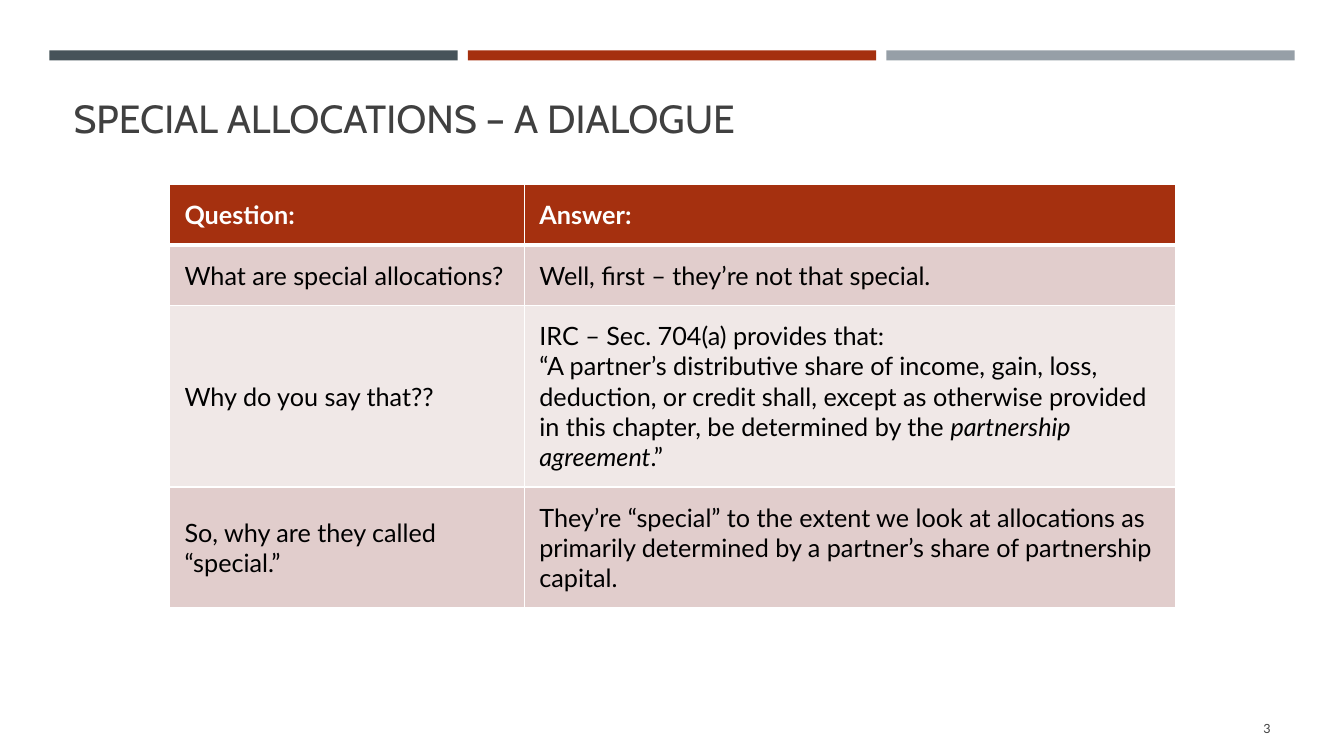
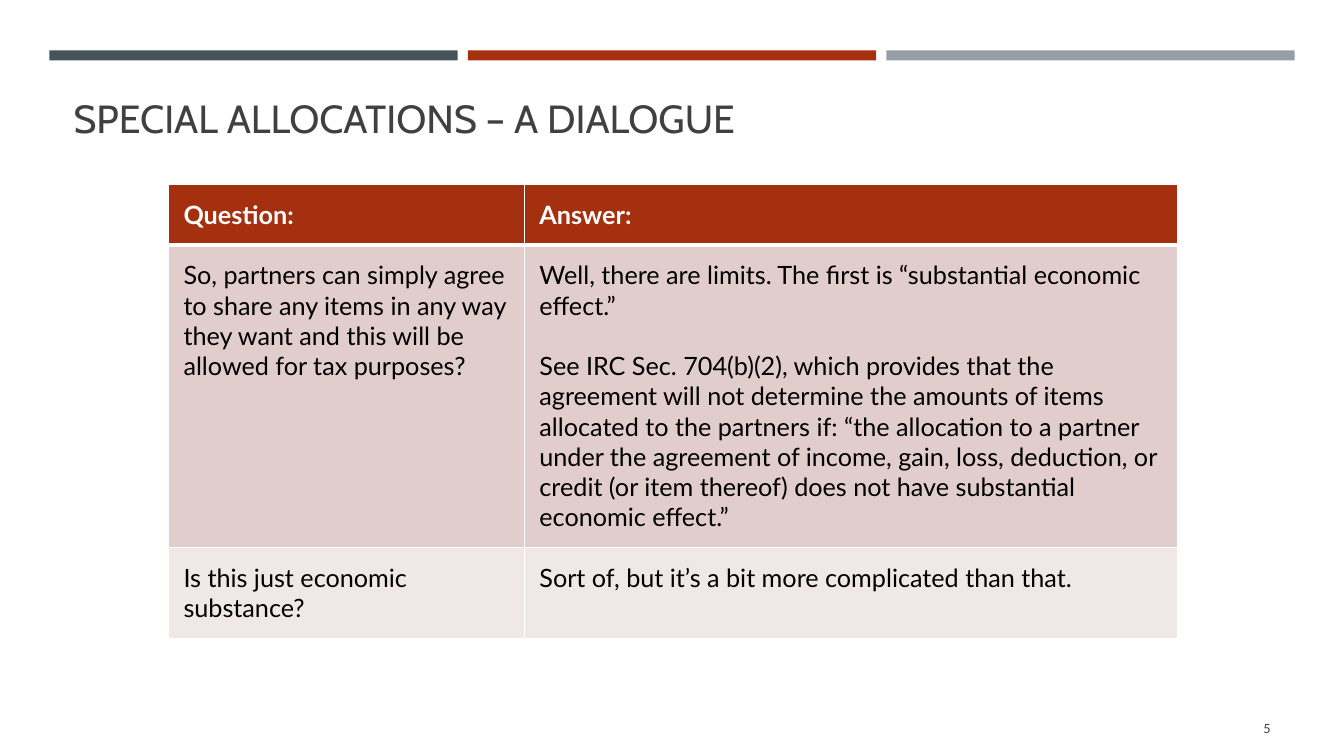
from lxml.etree import SubElement
from pptx import Presentation
from pptx.dml.color import RGBColor
from pptx.enum.shapes import MSO_SHAPE
from pptx.enum.text import MSO_ANCHOR, MSO_AUTO_SIZE, PP_ALIGN
from pptx.oxml.ns import qn
from pptx.util import Inches, Pt

SLATE, RUST, GREY = "465359", "A5300F", "969FA7"
INK, BLACK, WHITE = "404040", "000000", "FFFFFF"
ROW_FILLS = ("E1CDCC", "F0E8E7")
TITLE_FONT, BODY_FONT = "Cabin", "Lato"
TITLE = "SPECIAL ALLOCATIONS – A DIALOGUE"
HEADER = ("Question:", "Answer:")
LINE_HEIGHT = 0.3
CELL_MARGIN = 0.15


def color(value):
    """Turn a hex string into a colour."""
    return RGBColor.from_string(value)


class Deck:
    """Holds the shared style and the slide being built."""

    def __init__(self):
        """Start an empty widescreen presentation."""
        self.presentation = Presentation()
        self.presentation.slide_width = Inches(13.33)
        self.presentation.slide_height = Inches(7.5)
        self.slide = None

    def add_slide(self, title, number):
        """Add a slide with its bands, title and number."""
        self.slide = self.presentation.slides.add_slide(self.presentation.slide_layouts[5])
        self.add_bands()
        self.add_title(title)
        self.add_number(number)

    def add_bands(self):
        """Draw the three coloured bands along the top."""
        for index, fill in enumerate((SLATE, RUST, GREY)):
            band = self.slide.shapes.add_shape(
                MSO_SHAPE.RECTANGLE, Inches(0.49 + index * 4.15), Inches(0.5),
                Inches(4.05), Inches(0.1))
            band.shadow.inherit = False
            band.fill.solid()
            band.fill.fore_color.rgb = color(fill)
            band.line.fill.background()

    def add_run(self, paragraph, text, size, ink, font=BODY_FONT, bold=False, italic=False):
        """Append one formatted run to a paragraph."""
        run = paragraph.add_run()
        run.text = text
        run.font.name = font
        run.font.size = Pt(size)
        run.font.color.rgb = color(ink)
        run.font.bold = bold
        run.font.italic = italic

    def add_title(self, text):
        """Place and fill the title placeholder."""
        title = self.slide.shapes.title
        title.left, title.top = Inches(0.63), Inches(0.64)
        title.width, title.height = Inches(12.06), Inches(0.81)
        frame = title.text_frame
        frame.auto_size = MSO_AUTO_SIZE.NONE
        frame.vertical_anchor = MSO_ANCHOR.BOTTOM
        paragraph = frame.paragraphs[0]
        paragraph.alignment = PP_ALIGN.LEFT
        self.add_run(paragraph, text, 28, INK, TITLE_FONT)

    def add_number(self, number):
        """Write the slide number at the lower right."""
        box = self.slide.shapes.add_textbox(Inches(11.55), Inches(7.03), Inches(1.15), Inches(0.4))
        frame = box.text_frame
        frame.word_wrap = True
        frame.vertical_anchor = MSO_ANCHOR.MIDDLE
        paragraph = frame.paragraphs[0]
        paragraph.alignment = PP_ALIGN.RIGHT
        self.add_run(paragraph, str(number), 9, INK)

    def add_borders(self, cell, top, bottom):
        """Give a cell white borders of the given top and bottom widths."""
        properties = cell._tc.get_or_add_tcPr()
        for side, width in (("L", 1), ("R", 1), ("T", top), ("B", bottom)):
            line = SubElement(properties, qn(f"a:ln{side}"), w=str(Pt(width)))
            fill = SubElement(line, qn("a:solidFill"))
            SubElement(fill, qn("a:srgbClr"), val=WHITE)

    def fill_cell(self, cell, paragraphs, row, anchor, gap):
        """Style a cell and write its paragraphs, with the gap between them in points."""
        is_header = row == 0
        self.add_borders(cell, 3 if row == 1 else 1, 3 if is_header else 1)
        cell.fill.solid()
        cell.fill.fore_color.rgb = color(RUST if is_header else ROW_FILLS[(row - 1) % 2])
        cell.margin_left = cell.margin_right = Inches(CELL_MARGIN)
        cell.margin_top = cell.margin_bottom = Inches(CELL_MARGIN)
        cell.vertical_anchor = anchor
        frame = cell.text_frame
        for index, runs in enumerate(paragraphs):
            paragraph = frame.add_paragraph() if index else frame.paragraphs[0]
            if index:
                paragraph.space_before = Pt(gap)
            for position, text in enumerate(runs):
                self.add_run(paragraph, text, 18, WHITE if is_header else BLACK,
                             bold=is_header, italic=position % 2 == 1)

    def add_dialogue(self, left, widths, rows, anchor, gap=0):
        """Add a table of (line count, question, answer paragraphs); every second run is italic."""
        question, answer = HEADER
        rows = [(1, question, [[answer]]), *rows]
        heights = [2 * CELL_MARGIN + lines * LINE_HEIGHT for lines, _, _ in rows]
        frame = self.slide.shapes.add_table(
            len(rows), len(widths), Inches(left), Inches(1.83),
            Inches(sum(widths)), Inches(sum(heights)))
        table = frame.table
        table.horz_banding = False
        for column, width in zip(table.columns, widths):
            column.width = Inches(width)
        for index, (_, question, answer) in enumerate(rows):
            table.rows[index].height = Inches(heights[index])
            for column, paragraphs in enumerate(([[question]], answer)):
                self.fill_cell(table.cell(index, column), paragraphs, index, anchor, gap)


def main():
    """Build and save both slides."""
    deck = Deck()

    deck.add_slide(TITLE, 3)
    deck.add_dialogue(1.68, (3.52, 6.46), [
        (1, "What are special allocations?", [["Well, first – they’re not that special."]]),
        (5, "Why do you say that??", [
            ["IRC – Sec. 704(a) provides that:"],
            ["“A partner’s distributive share of income, gain, loss, deduction, or credit shall, "
             "except as otherwise provided in this chapter, be determined by the ",
             "partnership agreement", ".”"]]),
        (3, "So, why are they called “special.”", [
            ["They’re “special” to the extent we look at allocations as primarily determined "
             "by a partner’s share of partnership capital."]]),
    ], MSO_ANCHOR.MIDDLE)

    deck.add_slide(TITLE, 5)
    deck.add_dialogue(1.67, (3.53, 6.48), [
        (9, "So, partners can simply agree to share any items in any way they want and this "
            "will be allowed for tax purposes?", [
                ["Well, there are limits. The first is “substantial economic effect.”"],
                ["See IRC Sec. 704(b)(2), which provides that the agreement will not determine "
                 "the amounts of items allocated to the partners if: “the allocation to a partner "
                 "under the agreement of income, gain, loss, deduction, or credit (or item "
                 "thereof) does not have substantial economic effect.”"]]),
        (2, "Is this just economic substance?", [
            ["Sort of, but it’s a bit more complicated than that."]]),
    ], MSO_ANCHOR.TOP, gap=21.6)

    deck.presentation.save("out.pptx")


if __name__ == "__main__":
    main()
